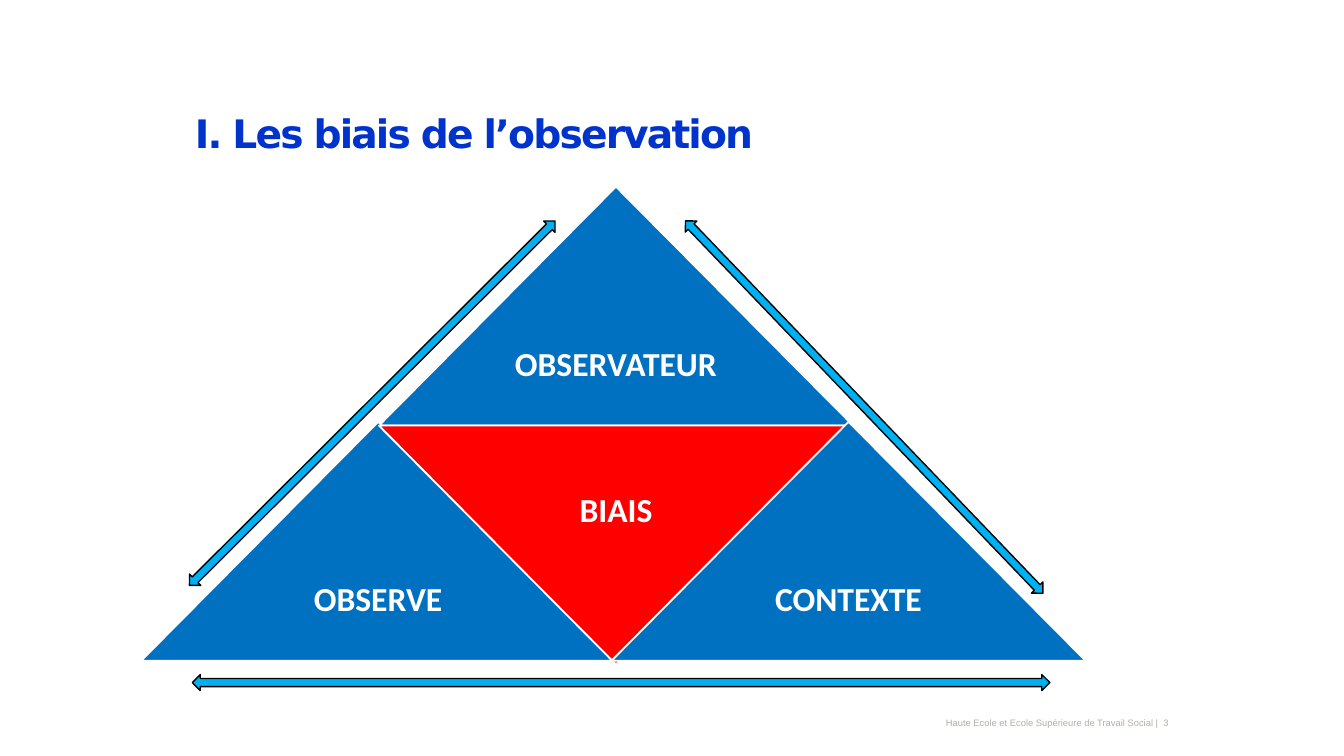
from dataclasses import dataclass

from pptx import Presentation
from pptx.dml.color import RGBColor as RGB
from pptx.enum.shapes import MSO_SHAPE as Shape
from pptx.enum.text import MSO_ANCHOR as Anchor, PP_ALIGN as Align
from pptx.util import Pt


@dataclass(frozen=True)
class Theme:
    """Colours, fonts and type sizes."""
    blue: str = "0070C0"
    red: str = "FF0000"
    sky: str = "00B0F0"
    white: str = "FFFFFF"
    black: str = "000000"
    navy: str = "0033CC"
    grey: str = "B5AEA7"
    head: str = "DejaVu Sans"
    body: str = "Calibri"
    small: str = "Arial"
    title: float = 21
    label: float = 18
    foot: float = 5


class Deck:
    """Holds the theme and the current slide."""

    def __init__(self, theme, slide):
        """Keep the theme and the slide."""
        self.theme = theme
        self.slide = slide

    def style(self, para, face, size, color, bold=False):
        """Set the font of a paragraph."""
        font = para.font
        font.name, font.size, font.bold = face, Pt(size), bold
        font.color.rgb = RGB.from_string(color)

    def title(self, text, x, y, w, h):
        """Place and format the title."""
        box = self.slide.shapes.title
        box.left, box.top, box.width, box.height = map(Pt, (x, y, w, h))
        frame = box.text_frame
        frame.vertical_anchor = Anchor.TOP
        para = frame.paragraphs[0]
        para.alignment = Align.LEFT
        run = para.add_run()
        run.text = text
        run._r.get_or_add_rPr().set("spc", "-100")
        self.style(para, self.theme.head, self.theme.title, self.theme.navy, True)

    def text(self, text, x, y, w, h, align):
        """Add a text box and return its frame and paragraph."""
        frame = self.slide.shapes.add_textbox(*map(Pt, (x, y, w, h))).text_frame
        frame.word_wrap = True
        frame.vertical_anchor = Anchor.MIDDLE
        para = frame.paragraphs[0]
        para.text, para.alignment = text, align
        return frame, para

    def label(self, text, x, y, w, h):
        """Add a bold centred label."""
        frame, para = self.text(text, x, y, w, h, Align.CENTER)
        frame.margin_left = frame.margin_right = Pt(5)
        frame.margin_top = frame.margin_bottom = Pt(5)
        para.line_spacing = 0.9
        self.style(para, self.theme.body, self.theme.label, self.theme.white, True)

    def footer(self, text, x, y, w, h):
        """Add the small footer line."""
        _, para = self.text(text, x, y, w, h, Align.RIGHT)
        para.line_spacing = Pt(7)
        self.style(para, self.theme.small, self.theme.foot, self.theme.grey)

    def shape(self, kind, x, y, w, h, fill, line, width, turn):
        """Add a filled and outlined shape."""
        item = self.slide.shapes.add_shape(kind, *map(Pt, (x, y, w, h)))
        item.shadow.inherit = False
        item.fill.solid()
        item.fill.fore_color.rgb = RGB.from_string(fill)
        item.line.color.rgb = RGB.from_string(line)
        item.line.width = Pt(width)
        item.rotation = turn

    def triangle(self, text, x, y, w, h, fill, turn=0, drop=0.5):
        """Add a triangle with its label, dropped by a share of the height."""
        self.shape(Shape.ISOSCELES_TRIANGLE, x, y, w, h, fill,
                   self.theme.white, 1, turn)
        self.label(text, x + w / 4, y + h * drop, w / 2, h / 2)

    def arrow(self, x, y, w, turn=0):
        """Add a double arrow."""
        self.shape(Shape.LEFT_RIGHT_ARROW, x, y, w, 8.6, self.theme.sky,
                   self.theme.black, 0.75, turn)


def main():
    """Build the slide and save it."""
    show = Presentation()
    show.slide_width, show.slide_height = Pt(720), Pt(405)
    theme = Theme()
    deck = Deck(theme, show.slides.add_slide(show.slide_layouts[5]))

    deck.footer("Haute Ecole et Ecole Supérieure de Travail Social |  3",
                455.8, 383, 177.8, 7.2)
    deck.title("I. Les biais de l’observation", 97.2, 54.7, 459.4, 36)

    wide, high = 254, 128
    mid, top, base = 203, 100, 226
    step = 126
    deck.triangle("OBSERVATEUR", mid, top, wide, high, theme.blue)
    deck.triangle("OBSERVE", mid - step - 1.4, base, wide, high, theme.blue)
    deck.triangle("BIAIS", mid, top + high, wide, high, theme.red, 180, 0.11)
    deck.triangle("CONTEXTE", mid + step - 1.4, base, wide, high, theme.blue)

    deck.arrow(61.2, 211.7, 276.5, 315.1)
    deck.arrow(324.7, 213.8, 276.5, 46.2)
    deck.arrow(103, 361.4, 459.4)
    show.save("out.pptx")


if __name__ == "__main__":
    main()
